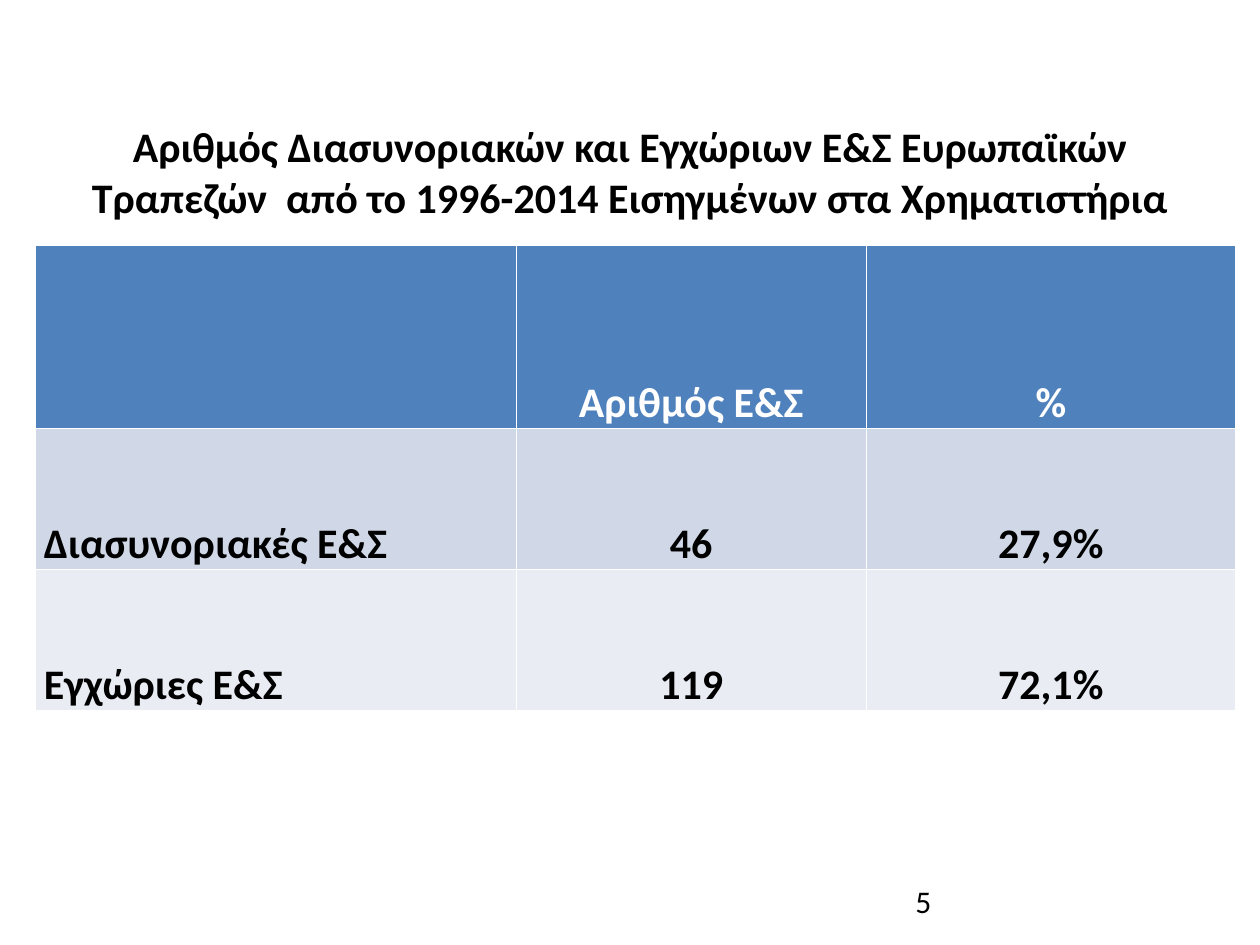
from lxml.etree import SubElement
from pptx import Presentation
from pptx.dml.color import RGBColor
from pptx.enum.text import MSO_ANCHOR as Anchor, MSO_AUTO_SIZE as AutoSize, PP_ALIGN as Align
from pptx.oxml.ns import qn
from pptx.util import Pt

FONT = "Calibri"
BLACK = RGBColor(0x00, 0x00, 0x00)
WHITE = RGBColor(0xFF, 0xFF, 0xFF)
HEADER_BLUE = RGBColor(0x4F, 0x81, 0xBD)
BAND_DARK = RGBColor(0xD0, 0xD8, 0xE7)
BAND_LIGHT = RGBColor(0xE9, 0xEC, 0xF3)

TITLE_LINES = [
    "Αριθμός Διασυνοριακών και Εγχώριων Ε&Σ Ευρωπαϊκών",
    "Τραπεζών  από το 1996-2014 Εισηγμένων στα Χρηματιστήρια",
]
ROWS = [
    ["", "Αριθμός Ε&Σ", "%"],
    ["Διασυνοριακές Ε&Σ", "46", "27,9%"],
    ["Εγχώριες Ε&Σ", "119", "72,1%"],
]
ROW_FILLS = [HEADER_BLUE, BAND_DARK, BAND_LIGHT]
COLUMN_WIDTHS = [275, 200, 211]
ROW_HEIGHTS = [105, 80.5, 80.5]


def add_span(para, text, size, color=BLACK, bold=False):
    span = para.add_run()
    span.text = text
    span.font.name = FONT
    span.font.size = Pt(size)
    span.font.bold = bold
    span.font.color.rgb = color


def add_borders(cell, color, width):
    properties = cell._tc.get_or_add_tcPr()
    for position, side in enumerate(("a:lnL", "a:lnR", "a:lnT", "a:lnB")):
        line = properties.makeelement(qn(side), {"w": str(Pt(width))})
        fill = SubElement(line, qn("a:solidFill"))
        SubElement(fill, qn("a:srgbClr"), val=str(color))
        properties.insert(position, line)


def place_title(page, left, top, width, height):
    title = page.shapes.title
    title.left, title.top = Pt(left), Pt(top)
    title.width, title.height = Pt(width), Pt(height)
    frame = title.text_frame
    frame.word_wrap = True
    frame.auto_size = AutoSize.NONE
    frame.vertical_anchor = Anchor.TOP
    para = frame.paragraphs[0]
    para.alignment = Align.CENTER
    for index, text in enumerate(TITLE_LINES):
        if index:
            para.add_line_break()
        add_span(para, text, 24, bold=True)


def place_table(page, left, top, width, height):
    frame = page.shapes.add_table(len(ROWS), len(COLUMN_WIDTHS),
                                  Pt(left), Pt(top), Pt(width), Pt(height))
    table = frame.table
    for column, column_width in zip(table.columns, COLUMN_WIDTHS):
        column.width = Pt(column_width)
    for row, row_height in zip(table.rows, ROW_HEIGHTS):
        row.height = Pt(row_height)

    for row_index, texts in enumerate(ROWS):
        for column_index, text in enumerate(texts):
            cell = table.cell(row_index, column_index)
            cell.fill.solid()
            cell.fill.fore_color.rgb = ROW_FILLS[row_index]
            add_borders(cell, WHITE, 0.91)
            cell.vertical_anchor = Anchor.BOTTOM
            cell.margin_left = cell.margin_right = Pt(5)
            cell.margin_top = cell.margin_bottom = Pt(0)
            para = cell.text_frame.paragraphs[0]
            para.alignment = Align.CENTER if column_index else Align.LEFT
            para.line_spacing = 1.02
            if text:
                add_span(para, text, 24, BLACK if row_index else WHITE, bold=True)


def place_page_number(page, left, top, width, height):
    box = page.shapes.add_textbox(Pt(left), Pt(top), Pt(width), Pt(height))
    box.text_frame.word_wrap = True
    add_span(box.text_frame.paragraphs[0], "5", 18)


def main():
    deck = Presentation()
    deck.slide_width, deck.slide_height = Pt(720), Pt(540)
    page = deck.slides.add_slide(deck.slide_layouts[5])  # title only
    place_title(page, 0, 65.5, 720, 55.5)
    place_page_number(page, 516, 500.5, 168, 29)
    place_table(page, 20, 140, sum(COLUMN_WIDTHS), sum(ROW_HEIGHTS))
    deck.save("out.pptx")


if __name__ == "__main__":
    main()
